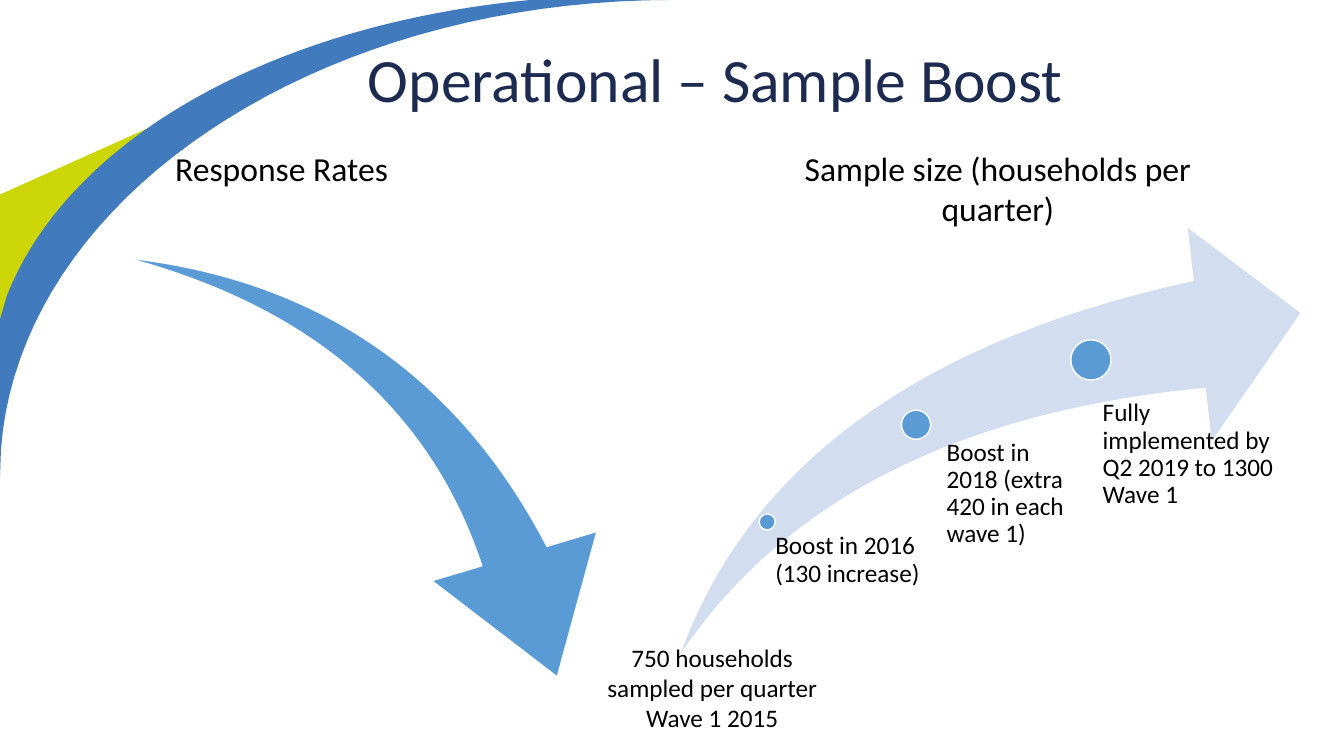
from pptx import Presentation
from pptx.dml.color import RGBColor
from pptx.enum.shapes import MSO_SHAPE
from pptx.enum.text import MSO_ANCHOR, MSO_AUTO_SIZE, PP_ALIGN
from pptx.util import Inches, Pt

SWOOSH, OVAL = MSO_SHAPE.SWOOSH_ARROW, MSO_SHAPE.OVAL
LEFT, CENTER = PP_ALIGN.LEFT, PP_ALIGN.CENTER
BLUE, WHITE = "5B9BD5", "FFFFFF"

prs = Presentation()
prs.slide_width, prs.slide_height = Inches(13.333), Inches(7.5)
W, H = prs.slide_width, prs.slide_height
s = prs.slides.add_slide(prs.slide_layouts[5])


def paint(shape, fill, line=None):
    shape.shadow.inherit = False
    shape.fill.solid()
    shape.fill.fore_color.rgb = RGBColor.from_string(fill)
    if line:
        shape.line.color.rgb = RGBColor.from_string(line)
        shape.line.width = Pt(1)
    else:
        shape.line.fill.background()


def write(shape, text, size, align=LEFT, color="000000", spacing=1.0):
    tf = shape.text_frame
    tf.word_wrap = True
    tf.auto_size = MSO_AUTO_SIZE.NONE
    tf.text = text
    p = tf.paragraphs[0]
    p.alignment, p.line_spacing = align, spacing
    p.font.name, p.font.size = "Calibri", Pt(size)
    p.font.color.rgb = RGBColor.from_string(color)
    return tf


# Corner decoration: a pair is a point, a triple of pairs is a Bezier curve
green = [(0, 1.93), (2.52, 0.8), (2.6, 0.98), (2.54, 1.01),
         ((1.4, 1.65), (0.56, 2.53), (0.2, 3.56)), (0.16, 3.69), (0, 3.32)]
crescent = [(0, 3.17), (0.07, 2.93), ((0.69, 1.37), (2.72, 0.24), (5.26, 0)),
            (6.67, 0), ((3.1, 0), (0.19, 1.98), (0.01, 4.46)), (0, 4.74)]
STEPS = 40
for outline, color in ((green, "CCD607"), (crescent, "417ABD")):
    points = []
    for part in outline:
        if len(part) == 2:
            points.append(part)
            continue
        curve = (points[-1], *part)
        for i in range(1, STEPS + 1):
            t = i / STEPS
            weights = ((1 - t) ** 3, 3 * t * (1 - t) ** 2, 3 * t * t * (1 - t), t ** 3)
            points.append(tuple(sum(w * c[axis] for w, c in zip(weights, curve))
                                for axis in (0, 1)))
    emu = [(Inches(x), Inches(y)) for x, y in points]
    builder = s.shapes.build_freeform(*emu[0])
    builder.add_line_segments(emu[1:], close=True)
    paint(builder.convert_to_shape(), color)

# Title
title = s.shapes.title
title.left, title.top = int(W * 0.2663), int(H * 0.0293)
title.width, title.height = int(W * 0.6645), int(H * 0.1587)
tf = write(title, "Operational – Sample Boost", 44, color="1E2B50", spacing=0.9)
tf.vertical_anchor = MSO_ANCHOR.MIDDLE

# Swoosh arrows: rising sample size, falling response rate (shares of the slide)
arrows = [
    ((0.5063, 0.3013, 0.4613, 0.564), 0, (0.25, 0.25), "D2DEEF", None),
    ((0.096, 0.336, 0.3638, 0.5493), 79.8, (0.163, 0.314), BLUE, WHITE),
]
for (x, y, w, h), rotation, adjust, fill, line in arrows:
    arrow = s.shapes.add_shape(SWOOSH, int(W * x), int(H * y), int(W * w), int(H * h))
    arrow.rotation = rotation
    arrow.adjustments[0], arrow.adjustments[1] = adjust
    paint(arrow, fill, line)

# Milestones: dot centre, diameter and label box as shares of the rising arrow
ax, ay, aw, ah = arrows[0][0]
ax, ay, aw, ah = W * ax, H * ay, W * aw, H * ah
milestones = [
    ("Boost in 2016 (130 increase)",
     0.14, 0.69, 0.026, (0.14, 0.716, 0.265, 0.262), 0.08),
    ("Boost in 2018 (extra 420 in each wave 1)",
     0.38, 0.462, 0.047, (0.405, 0.496, 0.24, 0.494), 0.15),
    ("Fully implemented by Q2 2019 to 1300 Wave 1",
     0.662, 0.31, 0.065, (0.647, 0.404, 0.333, 0.418), 0.21),
]
for text, cx, cy, diameter, (x, y, w, h), inset in milestones:
    d = int(aw * diameter)
    dot = s.shapes.add_shape(OVAL, int(ax + aw * cx - d / 2), int(ay + ah * cy - d / 2), d, d)
    paint(dot, BLUE, WHITE)
    label = s.shapes.add_textbox(int(ax + aw * x), int(ay + ah * y), int(aw * w), int(ah * h))
    tf = write(label, text, 18, spacing=0.9)
    tf.margin_left = Inches(inset)
    tf.margin_top = tf.margin_right = tf.margin_bottom = 0

# Headings and starting point (shares of the slide)
captions = [
    ("Response Rates", 24, LEFT, (0.123, 0.1893, 0.216, 0.0667)),
    ("Sample size (households per quarter)", 24, CENTER, (0.573, 0.1893, 0.339, 0.1213)),
    ("750 households sampled per quarter Wave 1 2015", 18, CENTER,
     (0.438, 0.8427, 0.1838, 0.1347)),
]
for text, size, align, (x, y, w, h) in captions:
    box = s.shapes.add_textbox(int(W * x), int(H * y), int(W * w), int(H * h))
    write(box, text, size, align)

prs.save("out.pptx")
